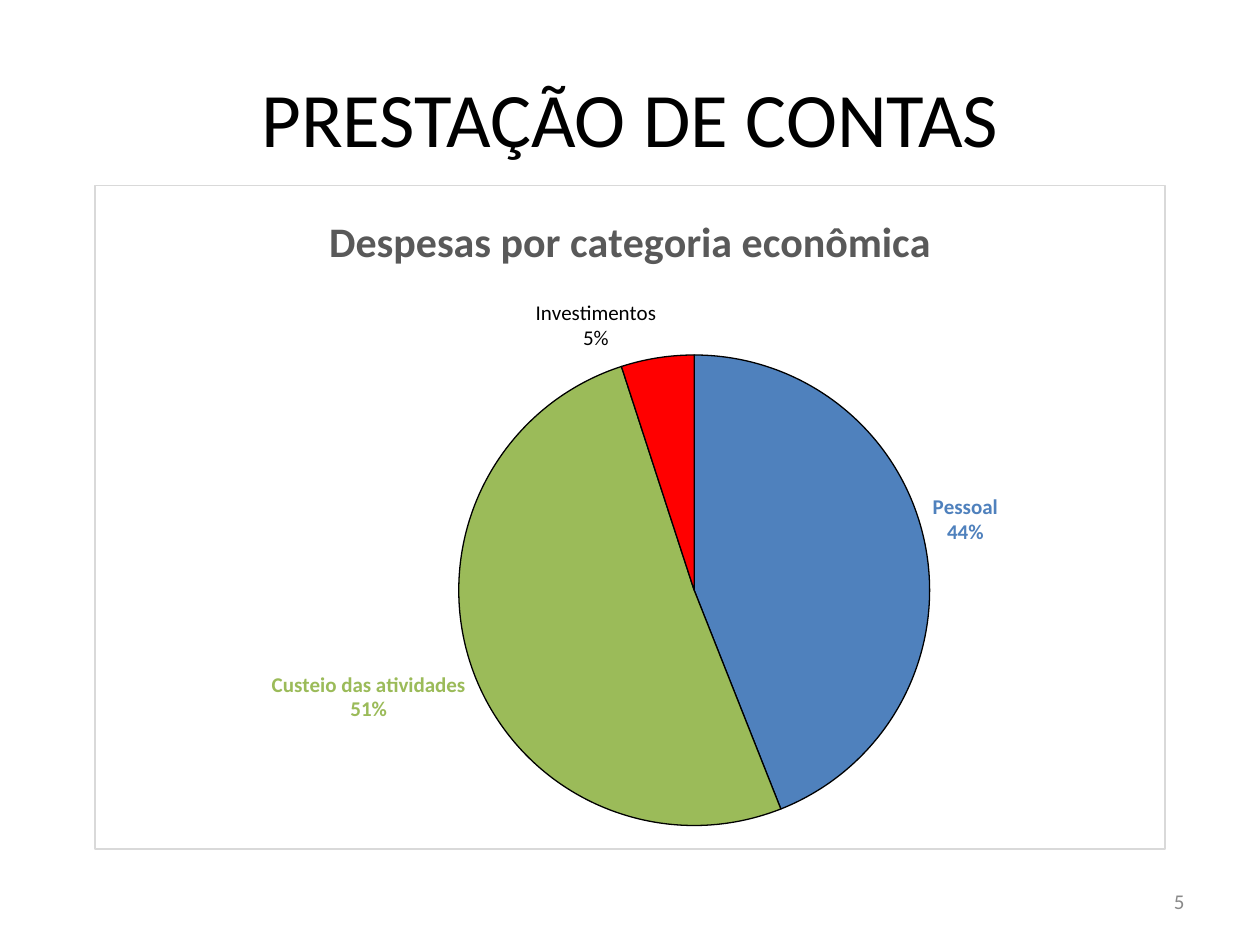
from dataclasses import dataclass

from lxml import etree
from pptx import Presentation
from pptx import util as u
from pptx.chart.data import CategoryChartData
from pptx.dml.color import RGBColor
from pptx.enum import chart as charts, text
from pptx.oxml import parse_xml
from pptx.oxml.ns import nsdecls, qn


@dataclass(frozen=True)
class Theme:
    font: str = "Calibri"
    ink: str = "000000"
    paper: str = "FFFFFF"
    heading: str = "595959"
    border: str = "D9D9D9"
    muted: str = "898989"
    blue: str = "4F81BD"
    green: str = "9BBB59"
    red: str = "FF0000"
    title_size: int = 44
    heading_size: int = 24
    label_size: int = 12
    chart_size: int = 10


THEME = Theme()

# category, percentage, slice colour, label colour, bold label
EXPENSES = [
    ("Pessoal", 44, THEME.blue, THEME.blue, True),
    ("Custeio das atividades", 51, THEME.green, THEME.green, True),
    ("Investimentos", 5, THEME.red, THEME.ink, False),
]


def style_font(font, size, color, bold=False):
    font.name = THEME.font
    font.size = u.Pt(size)
    font.bold = bold
    font.color.rgb = RGBColor.from_string(color)


def write_line(frame, words, size, color, align):
    frame.word_wrap = True
    frame.vertical_anchor = text.MSO_ANCHOR.MIDDLE
    para = frame.paragraphs[0]
    para.text = words
    para.alignment = align
    style_font(para.font, size, color)


def place_title(page, left, top, width, height):
    title = page.shapes.title
    title.left, title.top, title.width, title.height = left, top, width, height
    title.fill.solid()
    title.fill.fore_color.rgb = RGBColor.from_string(THEME.paper)
    write_line(title.text_frame, "PRESTAÇÃO DE CONTAS", THEME.title_size,
               THEME.ink, text.PP_ALIGN.CENTER)


def place_page_number(page, left, top, width, height):
    box = page.shapes.add_textbox(left, top, width, height)
    write_line(box.text_frame, "5", THEME.label_size, THEME.muted,
               text.PP_ALIGN.RIGHT)


def frame_chart(chart):
    """Give the whole chart area its fill and border."""
    area = parse_xml(
        f'<c:spPr {nsdecls("c", "a")}>'
        f'<a:solidFill><a:srgbClr val="{THEME.paper}"/></a:solidFill>'
        f'<a:ln w="{u.Pt(0.75)}"><a:solidFill><a:srgbClr val="{THEME.border}"/>'
        '</a:solidFill></a:ln></c:spPr>')
    chart.element.find(qn("c:chart")).addnext(area)


def position_plot(chart, x, y, w, h):
    """Set the inner plot box as fractions of the chart."""
    plot_area = chart.element.find(".//" + qn("c:plotArea"))
    for old in plot_area.findall(qn("c:layout")):
        plot_area.remove(old)
    places = "".join(f'<c:{tag} val="{value}"/>'
                     for tag, value in zip("xywh", (x, y, w, h)))
    plot_area.insert(0, parse_xml(
        f'<c:layout {nsdecls("c")}><c:manualLayout>'
        '<c:layoutTarget val="inner"/><c:xMode val="edge"/><c:yMode val="edge"/>'
        f'{places}</c:manualLayout></c:layout>'))


def show_category_and_percent(series):
    """Switch every label of the series to category over percentage."""
    flags = {"c:showVal": "0", "c:showCatName": "1", "c:showPercent": "1"}
    for tag in ("c:dLbl", "c:dLbls"):
        for label in series._element.iter(qn(tag)):
            for flag, value in flags.items():
                label.find(qn(flag)).set("val", value)
            separator = etree.Element(qn("c:separator"))
            separator.text = "\n"
            label.find(qn("c:showBubbleSize")).addnext(separator)


def style_slices(series):
    labels = series.data_labels
    labels.position = charts.XL_LABEL_POSITION.OUTSIDE_END
    style_font(labels.font, THEME.label_size, THEME.ink)
    for index, (_, _, fill, label_color, bold) in enumerate(EXPENSES):
        point = series.points[index]
        point.format.fill.solid()
        point.format.fill.fore_color.rgb = RGBColor.from_string(fill)
        point.format.line.width = u.Pt(0.75)
        point.format.line.color.rgb = RGBColor.from_string(THEME.ink)
        label = point.data_label
        style_font(label.font, THEME.label_size, label_color, bold)
        label.position = charts.XL_LABEL_POSITION.OUTSIDE_END
    show_category_and_percent(series)


def place_expense_pie(page, left, top, width, height):
    data = CategoryChartData(number_format="0")
    data.categories = [expense[0] for expense in EXPENSES]
    data.add_series("Despesas", [expense[1] for expense in EXPENSES])
    chart = page.shapes.add_chart(charts.XL_CHART_TYPE.PIE, left, top, width,
                                  height, data).chart
    style_font(chart.font, THEME.chart_size, THEME.ink)
    chart.has_legend = False
    chart.has_title = True
    heading = chart.chart_title.text_frame.paragraphs[0]
    heading.text = "Despesas por categoria econômica"
    style_font(heading.font, THEME.heading_size, THEME.heading, bold=True)
    chart.plots[0].vary_by_categories = True
    style_slices(chart.plots[0].series[0])
    position_plot(chart, 0.34, 0.25, 0.44, 0.72)
    frame_chart(chart)


def main():
    deck = Presentation()
    deck.slide_width, deck.slide_height = u.Cm(25.4), u.Cm(19.05)
    page = deck.slides.add_slide(deck.slide_layouts.get_by_name("Title Only"))
    place_title(page, u.Cm(1.27), u.Cm(0.76), u.Cm(22.86), u.Cm(3.18))
    place_expense_pie(page, u.Cm(1.9), u.Cm(3.73), u.Cm(21.6), u.Cm(13.4))
    place_page_number(page, u.Cm(18.2), u.Cm(17.65), u.Cm(5.93), u.Cm(1.02))
    deck.save("out.pptx")


if __name__ == "__main__":
    main()
